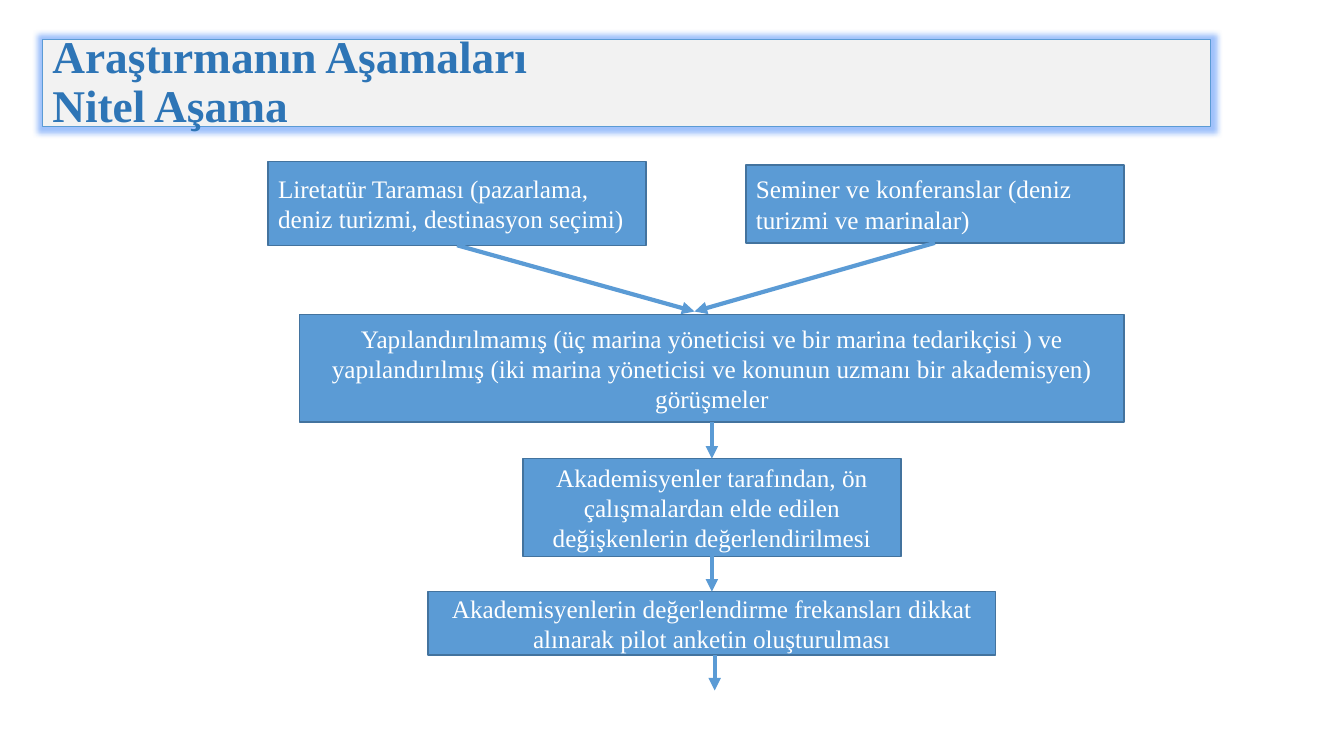
from dataclasses import dataclass

from lxml.etree import SubElement
from pptx import Presentation
from pptx.dml.color import RGBColor
from pptx.enum.shapes import MSO_CONNECTOR, MSO_SHAPE
from pptx.enum.text import MSO_ANCHOR, MSO_AUTO_SIZE, PP_ALIGN
from pptx.oxml.ns import qn
from pptx.util import Pt

STEP_BLUE = RGBColor(0x5B, 0x9B, 0xD5)
EDGE_BLUE = RGBColor(0x43, 0x73, 0x9E)
TITLE_BLUE = RGBColor(0x2E, 0x75, 0xB6)
TITLE_GREY = RGBColor(0xF2, 0xF2, 0xF2)
GLOW_BLUE = RGBColor(0x12, 0x66, 0xF6)
WHITE = RGBColor(0xFF, 0xFF, 0xFF)
TOP, BOTTOM = 0, 2
AXIS = 508.5
MERGE_POINT = (496.1, 222.5)


@dataclass(frozen=True)
class Step:
    text: str
    center: float
    top: float
    width: float
    height: float
    align: PP_ALIGN = PP_ALIGN.CENTER


SOURCES = [
    Step("Liretatür Taraması (pazarlama, deniz turizmi, destinasyon seçimi)",
         326.5, 115.2, 270, 60, PP_ALIGN.LEFT),
    Step("Seminer ve konferanslar (deniz turizmi ve marinalar)",
         667.8, 118, 270, 55.5, PP_ALIGN.LEFT),
]
STAGES = [
    Step("Yapılandırılmamış (üç marina yöneticisi ve bir marina tedarikçisi ) ve "
         "yapılandırılmış (iki marina yöneticisi ve konunun uzmanı bir akademisyen) "
         "görüşmeler", AXIS, 224.6, 589, 77),
    Step("Akademisyenler tarafından, ön çalışmalardan elde edilen "
         "değişkenlerin değerlendirilmesi", AXIS, 327.6, 270, 69.8),
    Step("Akademisyenlerin değerlendirme frekansları dikkat alınarak "
         "pilot anketin oluşturulması", AXIS, 422.6, 405.4, 45.4),
]


def apply(target, values: dict) -> None:
    for attribute, value in values.items():
        setattr(target, attribute, value)


def paint(shape, fill: RGBColor, edge: RGBColor, edge_width: float) -> None:
    shape.fill.solid()
    shape.fill.fore_color.rgb = fill
    shape.line.color.rgb = edge
    shape.line.width = Pt(edge_width)


def style_font(font, size: float, color: RGBColor, bold: bool) -> None:
    apply(font, {"name": "Times New Roman", "size": Pt(size), "bold": bold})
    font.color.rgb = color


def add_title(slide) -> None:
    heading = slide.shapes.title
    apply(heading, {"left": Pt(30.2), "top": Pt(28.1),
                    "width": Pt(834.5), "height": Pt(62.6)})
    paint(heading, TITLE_GREY, STEP_BLUE, 0.75)
    effects = SubElement(heading.element.spPr, qn("a:effectLst"))
    glow = SubElement(effects, qn("a:glow"), rad=str(Pt(8)))
    tint = SubElement(glow, qn("a:srgbClr"), val=str(GLOW_BLUE))
    SubElement(tint, qn("a:alpha"), val="40000")
    frame = heading.text_frame
    apply(frame, {"word_wrap": True, "auto_size": MSO_AUTO_SIZE.NONE,
                  "vertical_anchor": MSO_ANCHOR.MIDDLE})
    lines = frame.paragraphs[0]
    apply(lines, {"alignment": PP_ALIGN.LEFT, "line_spacing": 0.9})
    lines.add_run().text = "Araştırmanın Aşamaları"
    lines.add_line_break()
    lines.add_run().text = "Nitel Aşama"
    for run in lines.runs:
        style_font(run.font, 32.4, TITLE_BLUE, True)


def add_step(slide, step: Step):
    box = slide.shapes.add_shape(
        MSO_SHAPE.RECTANGLE, Pt(step.center - step.width / 2), Pt(step.top),
        Pt(step.width), Pt(step.height))
    box.shadow.inherit = False
    paint(box, STEP_BLUE, EDGE_BLUE, 1)
    frame = box.text_frame
    apply(frame, {"word_wrap": True, "vertical_anchor": MSO_ANCHOR.MIDDLE})
    wording = frame.paragraphs[0]
    wording.alignment = step.align
    run = wording.add_run()
    run.text = step.text
    style_font(run.font, 18, WHITE, False)
    return box


def add_arrow(slide, start: tuple[float, float], end: tuple[float, float]):
    arrow = slide.shapes.add_connector(
        MSO_CONNECTOR.STRAIGHT, *(Pt(value) for value in start + end))
    arrow.line.color.rgb = STEP_BLUE
    arrow.line.width = Pt(3)
    SubElement(arrow.line._get_or_add_ln(), qn("a:tailEnd"), type="triangle")
    SubElement(arrow.element.spPr, qn("a:effectLst"))
    return arrow


def main() -> None:
    deck = Presentation()
    apply(deck, {"slide_width": Pt(960), "slide_height": Pt(540)})
    slide = deck.slides.add_slide(deck.slide_layouts[5])
    add_title(slide)
    source_boxes = [add_step(slide, step) for step in SOURCES]
    stage_boxes = [add_step(slide, step) for step in STAGES]
    for source in source_boxes:
        add_arrow(slide, MERGE_POINT, MERGE_POINT).begin_connect(source, BOTTOM)
    for upper, lower in zip(stage_boxes, stage_boxes[1:]):
        arrow = add_arrow(slide, (AXIS, 0), (AXIS, 0))
        arrow.begin_connect(upper, BOTTOM)
        arrow.end_connect(lower, TOP)
    add_arrow(slide, (510.5, 468), (510.5, 493.2))
    deck.save("out.pptx")


if __name__ == "__main__":
    main()
